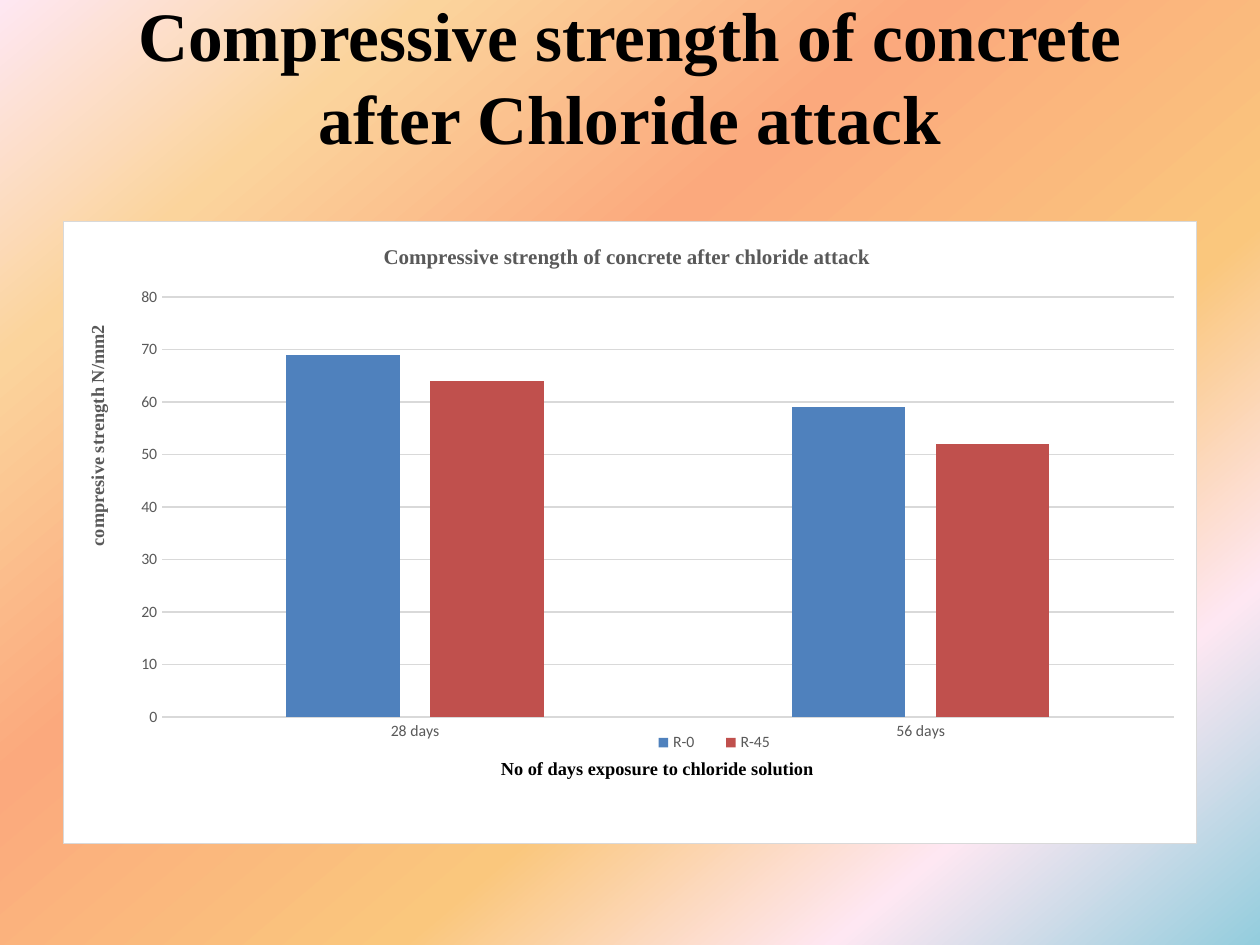
from lxml import etree
from pptx import Presentation
from pptx.chart.data import CategoryChartData
from pptx.dml.color import RGBColor
from pptx.enum.chart import XL_CHART_TYPE as ChartType
from pptx.enum.chart import XL_LEGEND_POSITION as LegendPosition
from pptx.enum.chart import XL_TICK_MARK as TickMark
from pptx.enum.text import MSO_ANCHOR as Anchor
from pptx.enum.text import PP_ALIGN as Align
from pptx.oxml import parse_xml
from pptx.oxml.ns import nsdecls, qn
from pptx.util import Inches, Pt

SERIF, SANS = "Times New Roman", "Calibri"
BLACK, GRAY, RULE = "000000", "595959", "D9D9D9"
STOPS = [(0, "93CDDD"), (18, "FEE7F2"), (36, "FAC77D"),
         (61, "FBA97D"), (82, "FBD49C"), (100, "FEE7F2")]
CATEGORIES = ["28 days", "56 days"]
SERIES = [("R-0", [69, 59], "4F81BD"), ("R-45", [64, 52], "C0504D")]


def color(value):
    return RGBColor.from_string(value)


def format_font(font, size, hex_color, name, bold=False):
    font.size, font.name, font.bold = Pt(size), name, bold
    font.color.rgb = color(hex_color)


def write_text(text_frame, text, size, hex_color=BLACK, name=SERIF, bold=True):
    paragraph = text_frame.paragraphs[0]
    paragraph.alignment = Align.CENTER
    run = paragraph.add_run()
    run.text = text
    format_font(run.font, size, hex_color, name, bold)


def format_line(line, hex_color=RULE):
    line.color.rgb = color(hex_color)
    line.width = Pt(0.75)


def place(parent, after=None, **percents):
    """Give a chart part a manual layout, in percent of the chart."""
    for layout in parent.findall(qn("c:layout")):
        parent.remove(layout)
    inner = '<c:layoutTarget val="inner"/>' if after is None else ""
    modes = "".join(f'<c:{key}Mode val="edge"/>' for key in ("x", "y"))
    values = "".join(f'<c:{key} val="{value / 100:.4f}"/>'
                     for key, value in percents.items())
    layout = parse_xml(f'<c:layout {nsdecls("c")}><c:manualLayout>'
                       f'{inner}{modes}{values}</c:manualLayout></c:layout>')
    if after is None:
        parent.insert(0, layout)
    else:
        parent.find(qn(after)).addnext(layout)


def paint_background(slide):
    fill = slide.background.fill
    fill.gradient()
    fill.gradient_angle = 130
    stop_list = slide.element.find(".//" + qn("a:gsLst"))
    for stop in list(stop_list):
        stop_list.remove(stop)
    for position, value in STOPS:
        stop = etree.SubElement(stop_list, qn("a:gs"), pos=str(position * 1000))
        etree.SubElement(stop, qn("a:srgbClr"), val=value)


def add_title(slide, left, top, width, height):
    title = slide.shapes.title
    title.left, title.top, title.width, title.height = left, top, width, height
    text_frame = title.text_frame
    text_frame.word_wrap = True
    text_frame.vertical_anchor = Anchor.MIDDLE
    # The deep bottom inset lifts the two lines above the middle of the box
    text_frame.margin_top, text_frame.margin_bottom = 0, Inches(0.65)
    write_text(text_frame, "Compressive strength of concrete after Chloride attack", 39.6)


def format_axis(axis, title, title_color):
    axis.major_tick_mark = axis.minor_tick_mark = TickMark.NONE
    format_font(axis.tick_labels.font, 9, GRAY, SANS)
    write_text(axis.axis_title.text_frame, title, 10.5, title_color)


def add_strength_chart(slide, left, top, width, height):
    data = CategoryChartData()
    data.categories = CATEGORIES
    for name, values, _ in SERIES:
        data.add_series(name, values)
    chart = slide.shapes.add_chart(
        ChartType.COLUMN_CLUSTERED, left, top, width, height, data).chart
    format_font(chart.font, 10, BLACK, SANS)

    # Columns
    plot = chart.plots[0]
    plot.gap_width, plot.overlap, plot.vary_by_categories = 219, -27, False
    for series, (_, _, value) in zip(plot.series, SERIES):
        series.format.fill.solid()
        series.format.fill.fore_color.rgb = color(value)

    # Titles, axes and legend
    chart.has_title = True
    write_text(chart.chart_title.text_frame,
               "Compressive strength of concrete after chloride attack", 12, GRAY)
    days, strength = chart.category_axis, chart.value_axis
    format_axis(days, "No of days exposure to chloride solution", BLACK)
    format_axis(strength, "compresive strength N/mm2", GRAY)
    format_line(days.format.line)
    strength.format.line.fill.background()
    format_line(strength.major_gridlines.format.line)
    strength.minimum_scale, strength.maximum_scale, strength.major_unit = 0, 80, 10
    chart.has_legend = True
    chart.legend.position = LegendPosition.BOTTOM
    chart.legend.include_in_layout = False
    format_font(chart.legend.font, 9, GRAY, SANS)

    # Manual places inside the chart
    root = chart.element
    chart_title, days_title, strength_title = (
        root.find(".//" + qn(tag) + "/" + qn("c:title"))
        for tag in ("c:chart", "c:catAx", "c:valAx"))
    strength_title.find(".//" + qn("a:bodyPr")).set("rot", "-5400000")
    place(chart_title, "c:tx", x=27.9, y=3)
    place(days_title, "c:tx", x=38.3, y=85.7)
    place(strength_title, "c:tx", x=1.7, y=16.2)
    place(root.find(".//" + qn("c:legend")), "c:legendPos", x=50.2, y=81.8, w=14.5, h=4)
    place(root.find(".//" + qn("c:plotArea")), x=8.7, y=12.2, w=89.3, h=67.5)

    # White chart area with a thin border
    root.find(qn("c:chart")).addnext(parse_xml(
        f'<c:spPr {nsdecls("c", "a")}>'
        '<a:solidFill><a:srgbClr val="FFFFFF"/></a:solidFill>'
        f'<a:ln w="{Pt(0.75)}"><a:solidFill><a:srgbClr val="{RULE}"/></a:solidFill></a:ln>'
        '</c:spPr>'))


def main():
    presentation = Presentation()
    presentation.slide_width, presentation.slide_height = Inches(10), Inches(7.5)
    slide = presentation.slides.add_slide(presentation.slide_layouts[5])
    paint_background(slide)
    add_title(slide, Inches(0.5), Inches(0.3), Inches(9), Inches(1.25))
    add_strength_chart(slide, Inches(0.5), Inches(1.75), Inches(9), Inches(4.95))
    presentation.save("out.pptx")


if __name__ == "__main__":
    main()
